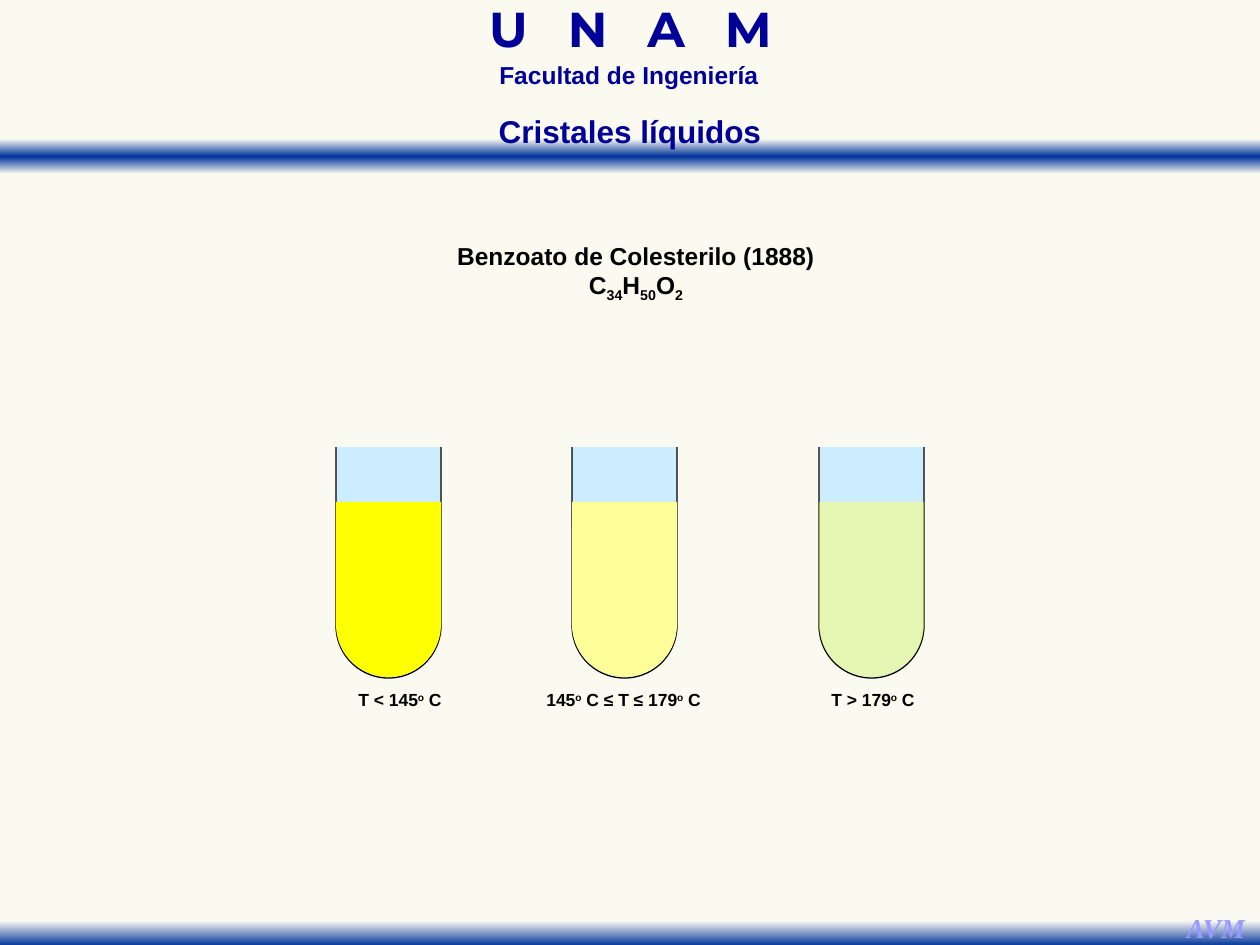
from lxml import etree
from pptx import Presentation
from pptx.dml.color import RGBColor
from pptx.enum.shapes import MSO_SHAPE as Shape
from pptx.enum.text import PP_ALIGN as Align
from pptx.oxml import parse_xml
from pptx.oxml.ns import nsdecls, qn
from pptx.util import Pt

PX = 914400 // 126
PAPER, NAVY, BLACK = "FAFAF0", "000099", "000000"
FADE, BLUE = "FAFAF2", "003399"
SUB, SUP = -25, 30

# top, height, gradient stops (percent, colour)
BANDS = [
    (139, 35, [(0, FADE), (50, BLUE), (100, FADE)]),
    (911, 35, [(28, FADE), (100, BLUE)]),
]

# A run is plain text or (text, attributes of the run)
GAP = (" ", {"spc": 1500})
DEGREE = ("o", {"baseline": SUP})


def sub(text):
    return text, {"baseline": SUB}


HEAD = ["U", GAP, "N", GAP, "A", GAP, "M"]
FORMULA = ["C", sub("34"), "H", sub("50"), "O", sub("2")]

# box, paragraphs as (runs, line spacing), style
TEXTS = [
    ((384, 8, 493, 54), [(HEAD, 0.7)],
     dict(size=28, font="Montserrat", color=NAVY)),
    ((404, 62, 450, 34), [(["Facultad de Ingeniería"], 0.7)],
     dict(size=14, color=NAVY)),
    ((1173, 905, 86, 47), [(["AVM"], None)],
     dict(size=15.6, font="Times New Roman", color="9999FF",
          italic=True, wrap=False)),
    ((444, 220, 384, 87),
     [(["Benzoato de Colesterilo (1888)"], 1.5), (FORMULA, None)],
     dict(size=14, wrap=False)),
    ((357, 106, 546, 50), [(["Cristales líquidos"], None)],
     dict(size=18, color=NAVY)),
]

# tube left, liquid colour, opacity, label left, label width, label runs
TUBES = [
    (336, "FFFF00", 100, 346, 110, ["T < 145", DEGREE, " C"]),
    (572, "FFFF99", 100, 534, 192,
     ["145", DEGREE, " C ≤ T ≤ 179", DEGREE, " C"]),
    (819, "FFFF66", 50, 819, 110, ["T > 179", DEGREE, " C"]),
]
TUBE_TOP, TUBE_W, TUBE_H = 384, 105, 294
RIM, LIQUID, LABEL = 447, 502, 683
MASK_PAD, MASK_TOP = 21, 373


def rgb(code):
    return RGBColor.from_string(code)


def scale(box):
    return [n * PX for n in box]


def draw(home, kind, box, fill=None, line=None):
    shape = home.add_shape(kind, *scale(box))
    shape.shadow.inherit = False
    if fill:
        shape.fill.solid()
        shape.fill.fore_color.rgb = rgb(fill)
    if line:
        shape.line.color.rgb = rgb(line)
        shape.line.width = Pt(0.75)
    else:
        shape.line.fill.background()
    return shape


def shade(shape, stops):
    """Fill the shape with a gradient that runs from top to bottom."""
    marks = "".join(
        f'<a:gs pos="{pos * 1000}"><a:srgbClr val="{code}"/></a:gs>'
        for pos, code in stops)
    grad = parse_xml(f'<a:gradFill {nsdecls("a")}><a:gsLst>{marks}</a:gsLst>'
                     '<a:lin ang="5400000" scaled="0"/></a:gradFill>')
    shape._element.spPr.find(qn("a:prstGeom")).addnext(grad)


def fade(shape, percent):
    """Set the opacity of a solid fill."""
    tint = shape._element.spPr.find(qn("a:solidFill"))[0]
    etree.SubElement(tint, qn("a:alpha")).set("val", str(percent * 1000))


def write(home, box, paras, size, font="Arial", color=BLACK,
          italic=False, wrap=True, align=Align.CENTER):
    frame = home.add_textbox(*scale(box)).text_frame
    frame.word_wrap = wrap
    for i, (runs, space) in enumerate(paras):
        para = frame.add_paragraph() if i else frame.paragraphs[0]
        para.alignment = align
        if space:
            para.line_spacing = space
        for item in runs:
            text, extra = (item, {}) if isinstance(item, str) else item
            run = para.add_run()
            run.text = text
            face = run.font
            face.name, face.size = font, Pt(size)
            face.bold, face.italic = True, italic
            face.color.rgb = rgb(color)
            for key, value in extra.items():
                if key == "baseline":
                    value *= 1000
                run._r.get_or_add_rPr().set(key, str(value))


def add_tube(slide, left, color, solid, label_x, label_w, runs):
    """Draw an open tube: the mask hides the round top of the glass."""
    home = slide.shapes.add_group_shape().shapes
    glass = draw(home, Shape.ROUNDED_RECTANGLE,
                 (left, TUBE_TOP, TUBE_W, TUBE_H), "CCECFF", BLACK)
    glass.adjustments[0] = 0.5
    draw(home, Shape.RECTANGLE,
         (left - MASK_PAD, MASK_TOP, TUBE_W + 2 * MASK_PAD, RIM - MASK_TOP),
         PAPER)
    liquid = draw(home, Shape.ROUND_2_SAME_RECTANGLE,
                  (left, LIQUID, TUBE_W, TUBE_TOP + TUBE_H - LIQUID - 1),
                  color)
    liquid.adjustments[0], liquid.adjustments[1] = 0, 0.5
    if solid < 100:
        fade(liquid, solid)
    write(home, (label_x, LABEL, label_w, 34), [(runs, None)],
          size=10, align=Align.LEFT)


def main():
    deck = Presentation()
    deck.slide_width, deck.slide_height = scale((1260, 945))
    slide = deck.slides.add_slide(deck.slide_layouts[6])
    back = slide.background.fill
    back.solid()
    back.fore_color.rgb = rgb(PAPER)
    for top, height, stops in BANDS:
        shade(draw(slide.shapes, Shape.RECTANGLE, (0, top, 1260, height)),
              stops)
    for tube in TUBES:
        add_tube(slide, *tube)
    for box, paras, style in TEXTS:
        write(slide.shapes, box, paras, **style)
    deck.save("out.pptx")


if __name__ == "__main__":
    main()
